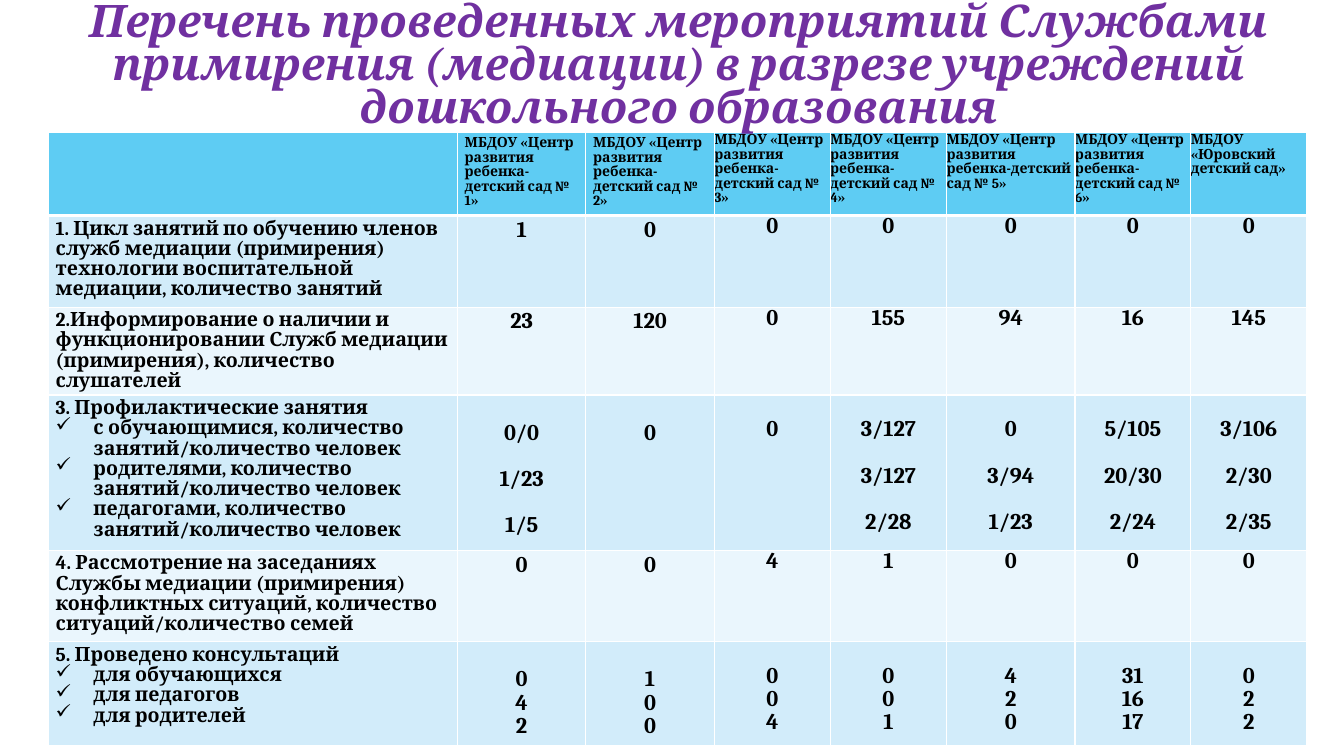
from pptx import Presentation
from pptx import util as u
from pptx.dml import color
from pptx.enum import text
from pptx.oxml import ns
from lxml import etree

Pt = u.Pt
FONT, WHITE, BLACK, BLUE = "Cambria", "FFFFFF", "000000", "5ECCF3"
BANDS = ["D2ECFA", "EAF6FD"]
TITLE = ("Перечень проведенных мероприятий Службами примирения (медиации) "
         "в разрезе учреждений дошкольного образования")
CENTER = "МБДОУ «Центр развития ребенка-детский сад № {}»"
HEADS = [CENTER.format(n) for n in range(1, 7)] + ["МБДОУ «Юровский детский сад»"]
COUNT = ", количество занятий/количество человек"
LINE = 16.6

ROWS = [
    dict(high=65.5, label="1. Цикл занятий по обучению членов служб медиации "
         "(примирения) технологии воспитательной медиации, количество занятий",
         vals=["1", "0", "0", "0", "0", "0", "0"]),
    dict(high=50.4, label="2.Информирование о наличии и функционировании Служб "
         "медиации (примирения), количество слушателей",
         vals=["23", "120", "0", "155", "94", "16", "145"]),
    dict(high=110.9, label="3. Профилактические занятия",
         items=[who + COUNT for who in ("с обучающимися", "родителями", "педагогами")],
         vals=["0/0 1/23 1/5", "0", "0", "3/127 3/127 2/28", "0 3/94 1/23",
               "5/105 20/30 2/24", "3/106 2/30 2/35"], gap=LINE),
    dict(high=65.5, label="4. Рассмотрение на заседаниях Службы медиации (примирения) "
         "конфликтных ситуаций, количество ситуаций/количество семей",
         vals=["0", "0", "4", "1", "0", "0", "0"]),
    dict(high=74.2, label="5. Проведено консультаций",
         items=["для обучающихся", "для педагогов", "для родителей"],
         vals=["0 4 2", "1 0 0", "0 0 4", "0 0 1", "4 2 0", "31 16 17", "0 2 2"]),
]
WIDTHS = [292.3, 91.8, 91.8, 82.8, 83.2, 91.8, 82.8, 82.8]
HEAD_H = 59


def rgb(code):
    return color.RGBColor.from_string(code)


def write(frame, lines, size=16, ink=BLACK, center=False, italic=False,
          space=0.9, gap=0, bullets=False):
    for i, line in enumerate(lines):
        para = frame.paragraphs[0] if i == 0 else frame.add_paragraph()
        para.alignment = text.PP_ALIGN.CENTER if center else text.PP_ALIGN.LEFT
        para.line_spacing = space
        if i and gap:
            para.space_before = Pt(gap)
        if i and bullets:
            props = para._p.get_or_add_pPr()
            props.set("marL", str(Pt(27)))
            props.set("indent", str(Pt(-27)))
            etree.SubElement(props, ns.qn("a:buChar")).set("char", "✓")
        run = para.add_run()
        run.text = line
        font = run.font
        font.name, font.size, font.bold, font.italic = FONT, Pt(size), True, italic
        font.color.rgb = rgb(ink)


def style(cell, row, col, fill, drop=0):
    props = cell._tc.get_or_add_tcPr()
    for side in "LRTB":
        thick = (row, side) in ((0, "B"), (1, "T"))
        edge = etree.SubElement(props, ns.qn("a:ln" + side))
        edge.set("w", str(Pt(3 if thick else 1)))
        solid = etree.SubElement(edge, ns.qn("a:solidFill"))
        etree.SubElement(solid, ns.qn("a:srgbClr")).set("val", WHITE)
    cell.fill.solid()
    cell.fill.fore_color.rgb = rgb(fill)
    wide, tall = (5.2, 2.4) if col < 3 else (0, 0)
    cell.margin_left = cell.margin_right = Pt(wide)
    cell.margin_top, cell.margin_bottom = Pt(tall + drop), Pt(tall)


def build_table(slide):
    highs = [HEAD_H] + [r["high"] for r in ROWS]
    grid = slide.shapes.add_table(len(highs), len(WIDTHS), Pt(34.6), Pt(94.9),
                                  Pt(sum(WIDTHS)), Pt(sum(highs))).table
    grid.horz_banding = False
    for col, width in enumerate(WIDTHS):
        grid.columns[col].width = Pt(width)
    for row, high in enumerate(highs):
        grid.rows[row].height = Pt(high)

    for col, head in enumerate([""] + HEADS):
        cell = grid.cell(0, col)
        style(cell, 0, col, BLUE)
        if head:
            write(cell.text_frame, [head], size=10)

    for row, data in enumerate(ROWS, 1):
        fill = BANDS[(row - 1) % 2]
        items = data.get("items", [])
        cell = grid.cell(row, 0)
        style(cell, row, 0, fill)
        write(cell.text_frame, [data["label"]] + items, size=14, bullets=True)
        for col, val in enumerate(data["vals"], 1):
            cell = grid.cell(row, col)
            style(cell, row, col, fill, drop=LINE if items else 0)
            write(cell.text_frame, val.split(), center=True, gap=data.get("gap", 0))


def build_title(slide):
    frame = slide.shapes.add_textbox(Pt(-0.7), Pt(15.1), Pt(971.3), Pt(66.2)).text_frame
    frame.word_wrap = True
    frame.vertical_anchor = text.MSO_ANCHOR.MIDDLE
    frame.margin_left = frame.margin_right = Pt(9.4)
    frame.margin_top = frame.margin_bottom = Pt(4.3)
    write(frame, [TITLE], size=32, ink="7030A0", center=True, italic=True, space=0.8)


def main():
    deck = Presentation()
    deck.slide_width, deck.slide_height = Pt(960.5), Pt(540)
    slide = deck.slides.add_slide(deck.slide_layouts[6])
    build_table(slide)
    build_title(slide)
    deck.save("out.pptx")


if __name__ == "__main__":
    main()
